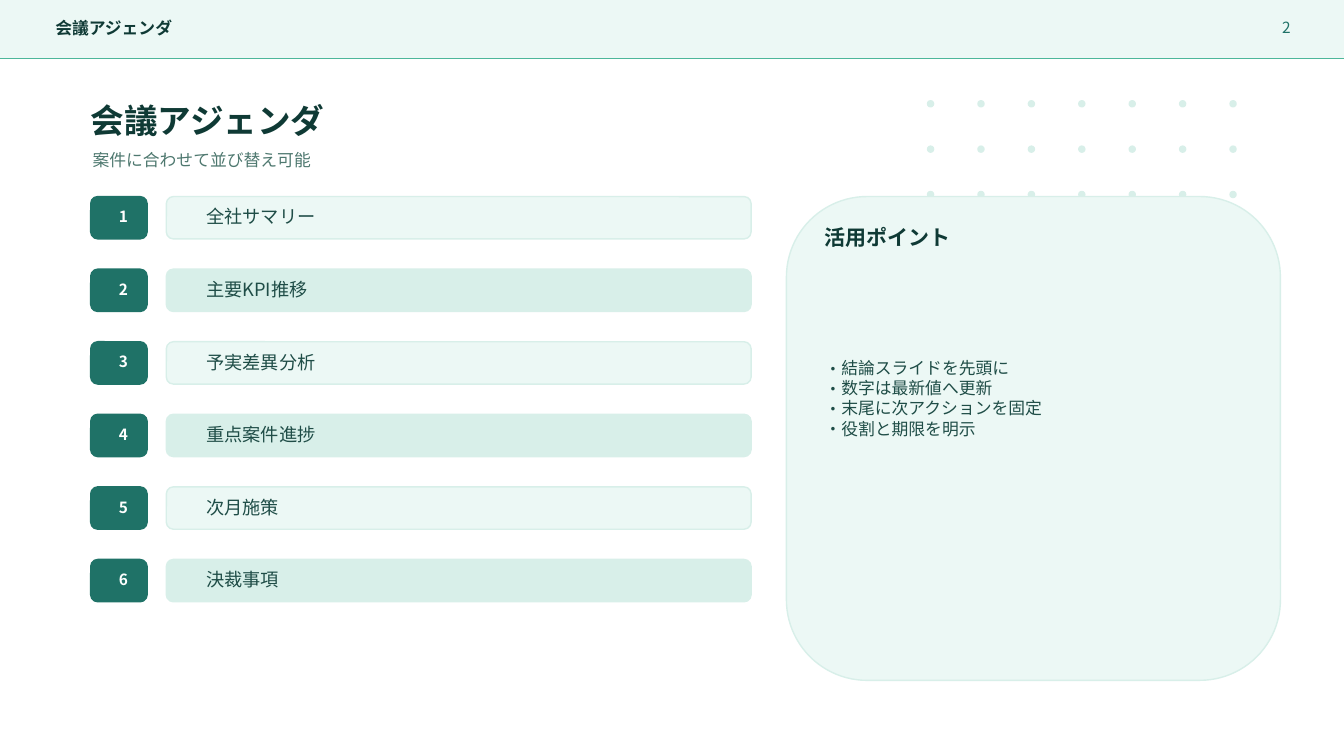
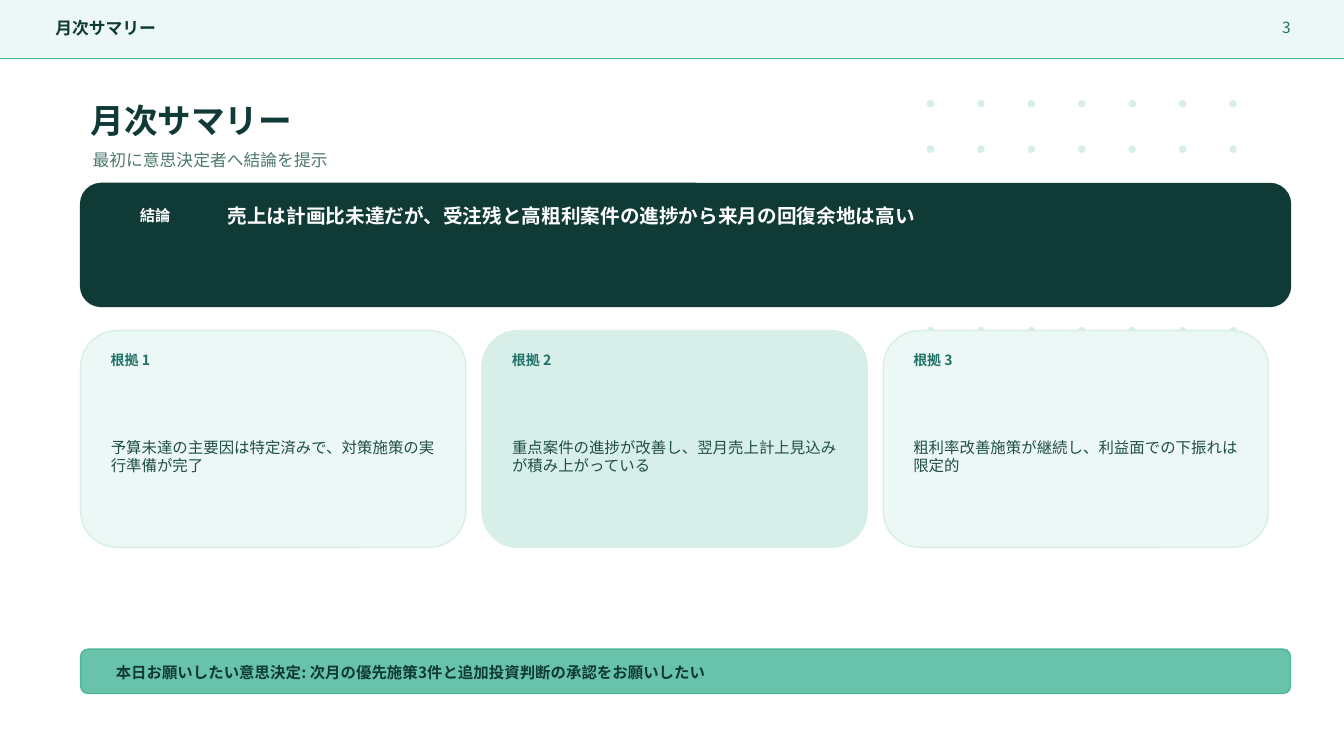
from dataclasses import dataclass

from lxml.etree import SubElement
from pptx import Presentation
from pptx.dml.color import RGBColor
from pptx.enum.shapes import MSO_CONNECTOR, MSO_SHAPE
from pptx.enum.text import MSO_ANCHOR, PP_ALIGN
from pptx.oxml.ns import qn
from pptx.shapes.autoshape import Shape
from pptx.slide import Slide
from pptx.util import Inches, Pt

DEEP_GREEN = RGBColor(0x0F, 0x3A, 0x35)
GREEN = RGBColor(0x1F, 0x72, 0x67)
ACCENT = RGBColor(0x4D, 0xB7, 0x9A)
MINT = RGBColor(0xD8, 0xEF, 0xE9)
PALE_MINT = RGBColor(0xEC, 0xF8, 0xF5)
BODY = RGBColor(0x1F, 0x4D, 0x47)
MUTED = RGBColor(0x4E, 0x78, 0x6F)
WHITE = RGBColor(0xFF, 0xFF, 0xFF)

BODY_FONT = "Noto Sans CJK JP"
TITLE_FONT = "Cabin"
SLIDE_WIDTH, SLIDE_HEIGHT = 13.33, 7.5
HEADER_HEIGHT = 0.58
BULLET_INDENT = Pt(12)


@dataclass(frozen=True)
class Box:
    """A rectangle in inches."""
    left: float
    top: float
    width: float
    height: float

    def lengths(self) -> tuple[Inches, Inches, Inches, Inches]:
        return Inches(self.left), Inches(self.top), Inches(self.width), Inches(self.height)


@dataclass(frozen=True)
class TextStyle:
    size: float
    color: RGBColor
    bold: bool = False
    align: PP_ALIGN = PP_ALIGN.LEFT
    font: str = BODY_FONT


@dataclass(frozen=True)
class Page:
    title: str
    subtitle: str
    number: int
    dot_rows: tuple[int, ...]


HEADER_STYLE = TextStyle(12, DEEP_GREEN, bold=True)
PAGE_NUMBER_STYLE = TextStyle(11, GREEN, align=PP_ALIGN.RIGHT)
TITLE_STYLE = TextStyle(24, DEEP_GREEN, bold=True, font=TITLE_FONT)
SUBTITLE_STYLE = TextStyle(12, MUTED)
BADGE_STYLE = TextStyle(11, WHITE, bold=True, align=PP_ALIGN.CENTER)
AGENDA_STYLE = TextStyle(13, BODY)
POINTS_HEADING_STYLE = TextStyle(15, DEEP_GREEN, bold=True)
POINTS_STYLE = TextStyle(12, BODY)
CONCLUSION_STYLE = TextStyle(14, WHITE, bold=True)
REASON_LABEL_STYLE = TextStyle(10, GREEN, bold=True)
REASON_STYLE = TextStyle(11, BODY)
REQUEST_STYLE = TextStyle(11, DEEP_GREEN, bold=True)

AGENDA_PAGE = Page("会議アジェンダ", "案件に合わせて並び替え可能", 2, (0, 1, 2))
SUMMARY_PAGE = Page("月次サマリー", "最初に意思決定者へ結論を提示", 3, (0, 1, 5))

AGENDA_ITEMS = ("全社サマリー", "主要KPI推移", "予実差異分析", "重点案件進捗", "次月施策", "決裁事項")
USAGE_POINTS = ("結論スライドを先頭に", "数字は最新値へ更新", "末尾に次アクションを固定", "役割と期限を明示")
REASONS = (
    "予算未達の主要因は特定済みで、対策施策の実行準備が完了",
    "重点案件の進捗が改善し、翌月売上計上見込みが積み上がっている",
    "粗利率改善施策が継続し、利益面での下振れは限定的",
)


def add_panel(slide: Slide, box: Box, fill: RGBColor, line: RGBColor,
              outline: MSO_SHAPE = MSO_SHAPE.ROUNDED_RECTANGLE) -> Shape:
    panel = slide.shapes.add_shape(outline, *box.lengths())
    panel.shadow.inherit = False
    panel.fill.solid()
    panel.fill.fore_color.rgb = fill
    panel.line.color.rgb = line
    panel.line.width = Pt(1)
    return panel


def add_bullet(paragraph, color: RGBColor) -> None:
    properties = paragraph._p.get_or_add_pPr()
    properties.set("marL", str(BULLET_INDENT))
    properties.set("indent", str(-BULLET_INDENT))
    bullet_color = SubElement(properties, qn("a:buClr"))
    SubElement(bullet_color, qn("a:srgbClr")).set("val", str(color))
    SubElement(properties, qn("a:buFont")).set("typeface", BODY_FONT)
    SubElement(properties, qn("a:buChar")).set("char", "・")


def add_text(slide: Slide, box: Box, style: TextStyle, *lines: str, bulleted: bool = False) -> None:
    frame = slide.shapes.add_textbox(*box.lengths()).text_frame
    frame.word_wrap = True
    frame.vertical_anchor = MSO_ANCHOR.MIDDLE
    frame.text = "\n".join(lines)
    for paragraph in frame.paragraphs:
        if bulleted:
            add_bullet(paragraph, style.color)
        paragraph.alignment = style.align
        font = paragraph.font
        font.size = Pt(style.size)
        font.bold = style.bold
        font.color.rgb = style.color
        font.name = style.font
        # The East Asian typeface has no public setter
        SubElement(font._element, qn("a:ea")).set("typeface", style.font)


def stripe(index: int) -> RGBColor:
    """Alternating fill of repeated panels."""
    return MINT if index % 2 else PALE_MINT


def add_page(deck: Presentation, page: Page) -> Slide:
    """Add a slide with the shared dots, header band and titles."""
    slide = deck.slides.add_slide(deck.slide_layouts[6])
    for row in page.dot_rows:
        for column in range(7):
            dot = Box(9.2 + 0.5 * column, 1 + 0.45 * row, 0.06, 0.06)
            add_panel(slide, dot, MINT, MINT, MSO_SHAPE.OVAL)

    add_panel(slide, Box(0, 0, SLIDE_WIDTH, HEADER_HEIGHT), PALE_MINT, PALE_MINT, MSO_SHAPE.RECTANGLE)
    rule = slide.shapes.add_connector(MSO_CONNECTOR.STRAIGHT, Inches(0), Inches(HEADER_HEIGHT),
                                      Inches(SLIDE_WIDTH), Inches(HEADER_HEIGHT))
    rule.line.color.rgb = ACCENT
    rule.line.width = Pt(1)
    SubElement(rule._element.spPr, qn("a:effectLst"))

    add_text(slide, Box(0.45, 0.15, 9.3, 0.26), HEADER_STYLE, page.title)
    add_text(slide, Box(12.2, 0.14, 0.7, 0.26), PAGE_NUMBER_STYLE, str(page.number))
    add_text(slide, Box(0.8, 0.95, 11.4, 0.48), TITLE_STYLE, page.title)
    add_text(slide, Box(0.82, 1.44, 11.2, 0.3), SUBTITLE_STYLE, page.subtitle)
    return slide


def build_agenda(deck: Presentation) -> None:
    slide = add_page(deck, AGENDA_PAGE)
    for index, item in enumerate(AGENDA_ITEMS):
        top = 1.95 + 0.72 * index
        add_panel(slide, Box(0.9, top, 0.56, 0.42), GREEN, GREEN)
        add_text(slide, Box(1.08, top + 0.1, 0.2, 0.2), BADGE_STYLE, str(index + 1))
        add_panel(slide, Box(1.65, top, 5.8, 0.42), stripe(index), MINT)
        add_text(slide, Box(1.95, top + 0.1, 5.2, 0.2), AGENDA_STYLE, item)

    add_panel(slide, Box(7.8, 1.95, 4.9, 4.8), PALE_MINT, MINT)
    add_text(slide, Box(8.08, 2.2, 4.1, 0.3), POINTS_HEADING_STYLE, "活用ポイント")
    add_text(slide, Box(8.08, 2.7, 4.2, 2.5), POINTS_STYLE, *USAGE_POINTS, bulleted=True)


def build_summary(deck: Presentation) -> None:
    slide = add_page(deck, SUMMARY_PAGE)
    add_panel(slide, Box(0.8, 1.82, 12, 1.22), DEEP_GREEN, DEEP_GREEN)
    add_text(slide, Box(1.04, 2.02, 1, 0.24), BADGE_STYLE, "結論")
    add_text(slide, Box(2.16, 1.98, 10.4, 0.32), CONCLUSION_STYLE,
             "売上は計画比未達だが、受注残と高粗利案件の進捗から来月の回復余地は高い")

    card_width, card_gap = 3.82, 0.16
    for index, reason in enumerate(REASONS):
        left = 0.8 + (card_width + card_gap) * index
        add_panel(slide, Box(left, 3.28, card_width, 2.15), stripe(index), MINT)
        add_text(slide, Box(left + 0.2, 3.46, 0.9, 0.22), REASON_LABEL_STYLE, f"根拠 {index + 1}")
        add_text(slide, Box(left + 0.2, 3.78, card_width - 0.4, 1.5), REASON_STYLE, reason)

    request = add_panel(slide, Box(0.8, 6.44, 12, 0.44), ACCENT, ACCENT)
    fill_color = request._element.spPr.find(qn("a:solidFill")).find(qn("a:srgbClr"))
    SubElement(fill_color, qn("a:alpha")).set("val", "84000")
    add_text(slide, Box(1.05, 6.56, 11.5, 0.22), REQUEST_STYLE,
             "本日お願いしたい意思決定: 次月の優先施策3件と追加投資判断の承認をお願いしたい")


def main() -> None:
    deck = Presentation()
    deck.slide_width = Inches(SLIDE_WIDTH)
    deck.slide_height = Inches(SLIDE_HEIGHT)
    build_agenda(deck)
    build_summary(deck)
    deck.save("out.pptx")


if __name__ == "__main__":
    main()
